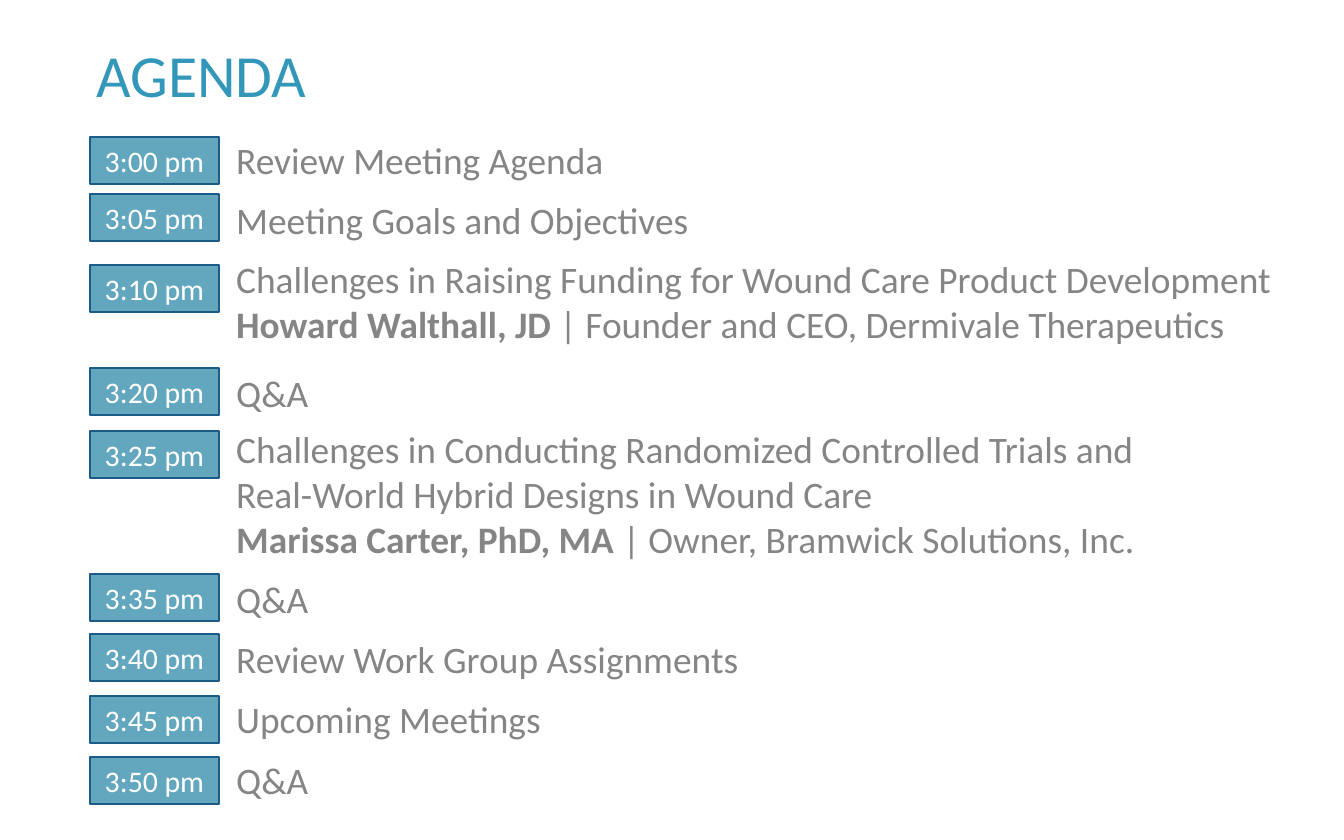
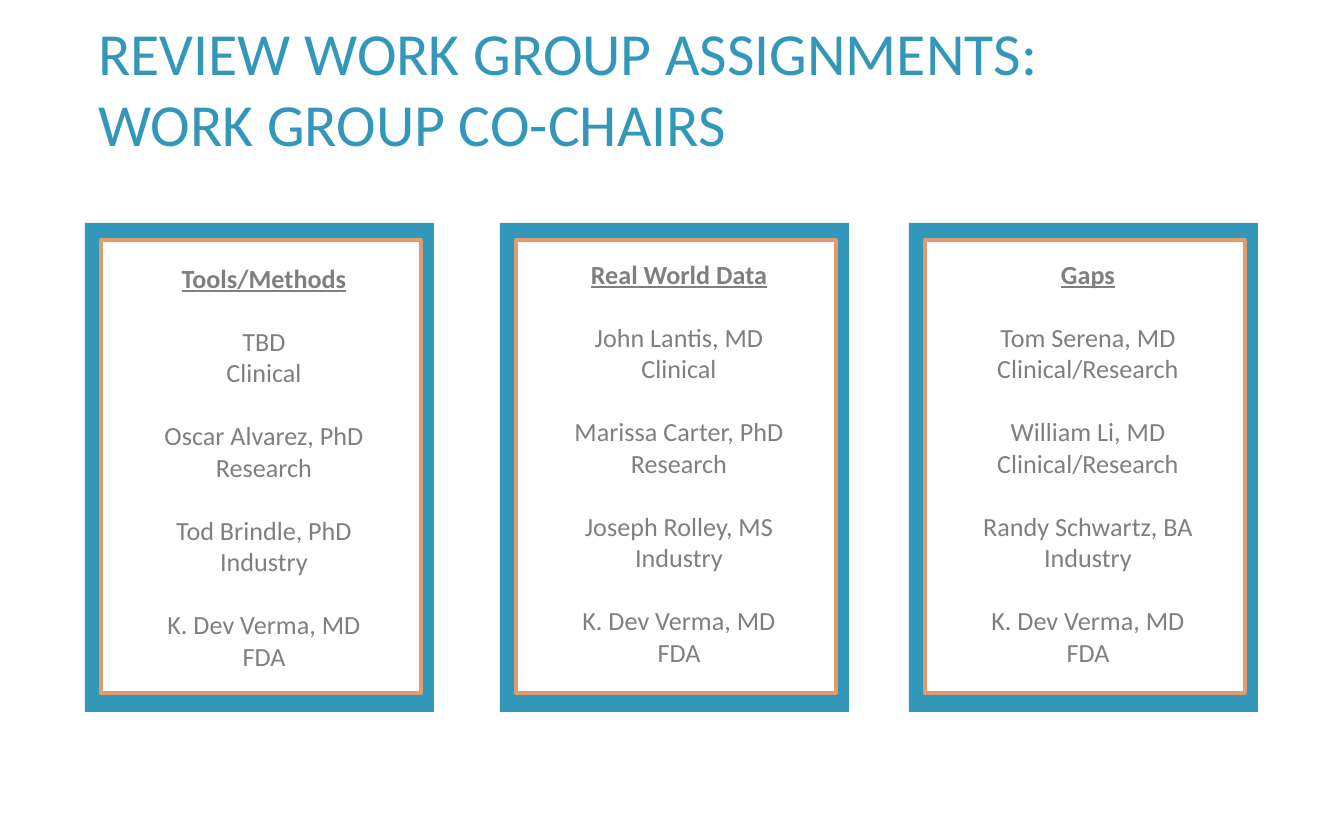
from lxml.etree import SubElement
from pptx import Presentation
from pptx.dml.color import RGBColor
from pptx.enum.shapes import MSO_SHAPE
from pptx.enum.text import MSO_ANCHOR, MSO_AUTO_SIZE, PP_ALIGN
from pptx.oxml.ns import qn
from pptx.util import Emu, Pt

PX = 914400 / 134.4
FONT = "Calibri"
COLORS = {
    "title": "3397B9",
    "frame": "3397B9",
    "panel": "FFFFFF",
    "panel_line": "E09B6E",
    "time": "2E8AA9",
    "time_line": "1C5B88",
    "time_text": "FFFFFF",
    "topic": "858585",
    "chair": "7F7F7F",
}

AGENDA = [
    ("3:00 pm", 137, 130, ["Review Meeting Agenda"]),
    ("3:05 pm", 194, 190, ["Meeting Goals and Objectives"]),
    ("3:10 pm", 265, 249, [
        "Challenges in Raising Funding for Wound Care Product Development",
        ("Howard Walthall, JD ", "| Founder and CEO, Dermivale Therapeutics")]),
    ("3:20 pm", 368, 363, ["Q&A"]),
    ("3:25 pm", 431, 419, [
        "Challenges in Conducting Randomized Controlled Trials and",
        "Real-World Hybrid Designs in Wound Care",
        ("Marissa Carter, PhD, MA ", "| Owner, Bramwick Solutions, Inc.")]),
    ("3:35 pm", 574, 569, ["Q&A"]),
    ("3:40 pm", 634, 629, ["Review Work Group Assignments"]),
    ("3:45 pm", 696, 689, ["Upcoming Meetings"]),
    ("3:50 pm", 757, 750, ["Q&A"]),
]

GROUPS = [
    (85, 257, "Tools/Methods", [
        ("TBD", "Clinical"), ("Oscar Alvarez, PhD", "Research"),
        ("Tod Brindle, PhD", "Industry"), ("K. Dev Verma, MD", "FDA")]),
    (500, 253, "Real World Data", [
        ("John Lantis, MD", "Clinical"), ("Marissa Carter, PhD", "Research"),
        ("Joseph Rolley, MS", "Industry"), ("K. Dev Verma, MD", "FDA")]),
    (909, 253, "Gaps", [
        ("Tom Serena, MD", "Clinical/Research"),
        ("William Li, MD", "Clinical/Research"),
        ("Randy Schwartz, BA", "Industry"), ("K. Dev Verma, MD", "FDA")]),
]


def px(*lengths):
    """Turn pixel lengths into EMU."""
    return [Emu(round(n * PX)) for n in lengths]


def rgb(name):
    """Look up a named colour."""
    return RGBColor.from_string(COLORS[name])


def add_run(p, text, size, color, bold=False, underline=False):
    """Append one styled run to a paragraph."""
    r = p.add_run()
    r.text = text
    r.font.name = FONT
    r.font.size = Pt(size)
    r.font.bold = bold
    r.font.underline = underline
    r.font.color.rgb = rgb(color)


def next_paragraph(tf):
    """Return the unused first paragraph, or a new one."""
    first = tf.paragraphs[0]
    return tf.add_paragraph() if first.runs else first


def add_text_box(shapes, box):
    """Add a wrapping text box and return its text frame."""
    tf = shapes.add_textbox(*px(*box)).text_frame
    tf.word_wrap = True
    return tf


def add_rect(shapes, box, fill, line=None, width=1, alpha=None):
    """Add a flat rectangle with optional outline and opacity percentage."""
    s = shapes.add_shape(MSO_SHAPE.RECTANGLE, *px(*box))
    s.shadow.inherit = False
    s.fill.solid()
    s.fill.fore_color.rgb = rgb(fill)
    if alpha is not None:
        clr = s._element.spPr.find(qn("a:solidFill")).find(qn("a:srgbClr"))
        SubElement(clr, qn("a:alpha")).set("val", str(alpha * 1000))
    if line:
        s.line.color.rgb = rgb(line)
        s.line.width = Pt(width)
    else:
        s.line.fill.background()
    return s


def add_title(s, box, lines, spacing=1.0):
    """Add the slide title, one paragraph per line."""
    tf = add_text_box(s.shapes, box)
    for line in lines:
        p = next_paragraph(tf)
        p.line_spacing = spacing
        add_run(p, line, 32, "title")


def add_time(s, top, time):
    """Add a translucent time badge."""
    badge = add_rect(s.shapes, (90, top, 129, 47), "time", "time_line", alpha=75)
    tf = badge.text_frame
    tf.word_wrap = False
    tf.vertical_anchor = MSO_ANCHOR.MIDDLE
    p = tf.paragraphs[0]
    p.alignment = PP_ALIGN.CENTER
    add_run(p, time, 16, "time_text")


def add_topic(s, top, lines):
    """Add an agenda topic, with any speaker name in bold."""
    tf = add_text_box(s.shapes, (223, top, 1099, 14 + 45 * len(lines)))
    tf.vertical_anchor = MSO_ANCHOR.MIDDLE
    tf.auto_size = MSO_AUTO_SIZE.SHAPE_TO_FIT_TEXT
    for line in lines:
        p = next_paragraph(tf)
        if isinstance(line, tuple):
            speaker, role = line
            add_run(p, speaker, 20, "topic", bold=True)
            add_run(p, role, 20, "topic")
        else:
            add_run(p, line, 20, "topic")


def add_group_card(s, left, text_top, name, chairs):
    """Add a framed card listing the co-chairs of a work group."""
    shapes = s.shapes.add_group_shape().shapes
    add_rect(shapes, (left, 223, 349, 489), "frame")
    add_rect(shapes, (left + 16, 240, 320, 453), "panel", "panel_line", 2.25)
    tf = add_text_box(shapes, (left + 26, text_top, 306, 430))
    tf.margin_left, tf.margin_top, tf.margin_right, tf.margin_bottom = px(9, 5, 9, 5)
    p = next_paragraph(tf)
    p.alignment = PP_ALIGN.CENTER
    add_run(p, name, 14, "chair", bold=True, underline=True)
    for chair, field in chairs:
        for text, gap in ((chair, 17), (field, 0)):
            p = next_paragraph(tf)
            p.alignment = PP_ALIGN.CENTER
            p.space_before = Pt(gap)
            add_run(p, text, 14, "chair")


def main():
    """Build the agenda and co-chair slides."""
    prs = Presentation()
    prs.slide_width, prs.slide_height = px(1344, 840)
    blank = prs.slide_layouts[6]

    s = prs.slides.add_slide(blank)
    add_title(s, (83, 39, 1176, 62), ["AGENDA"], 0.9)
    for time, time_top, topic_top, lines in AGENDA:
        add_topic(s, topic_top, lines)
        add_time(s, time_top, time)

    s = prs.slides.add_slide(blank)
    for group in GROUPS:
        add_group_card(s, *group)
    add_title(s, (85, 9, 1202, 167),
              ["REVIEW WORK GROUP ASSIGNMENTS:", "WORK GROUP CO-CHAIRS"])

    prs.save("out.pptx")


if __name__ == "__main__":
    main()
